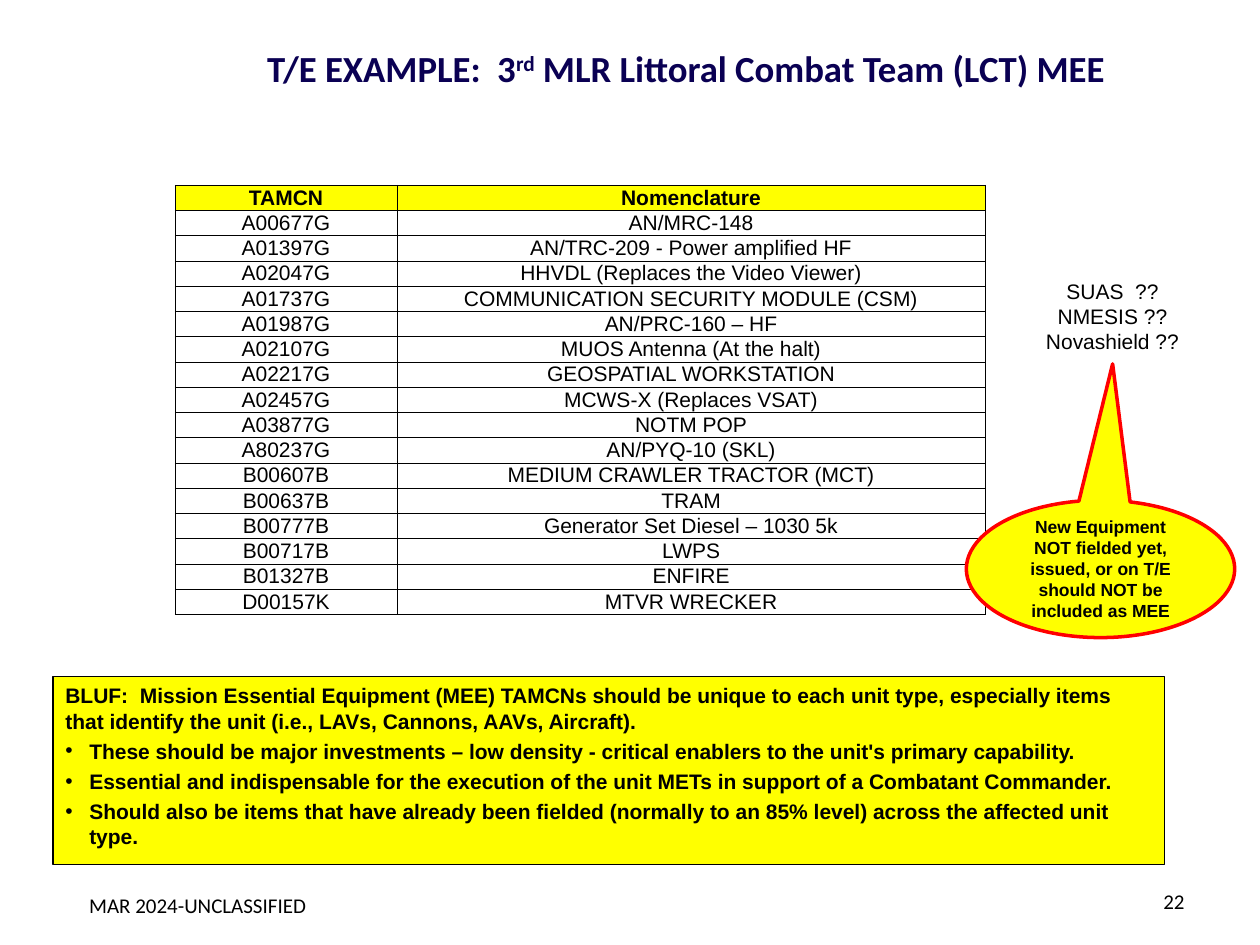
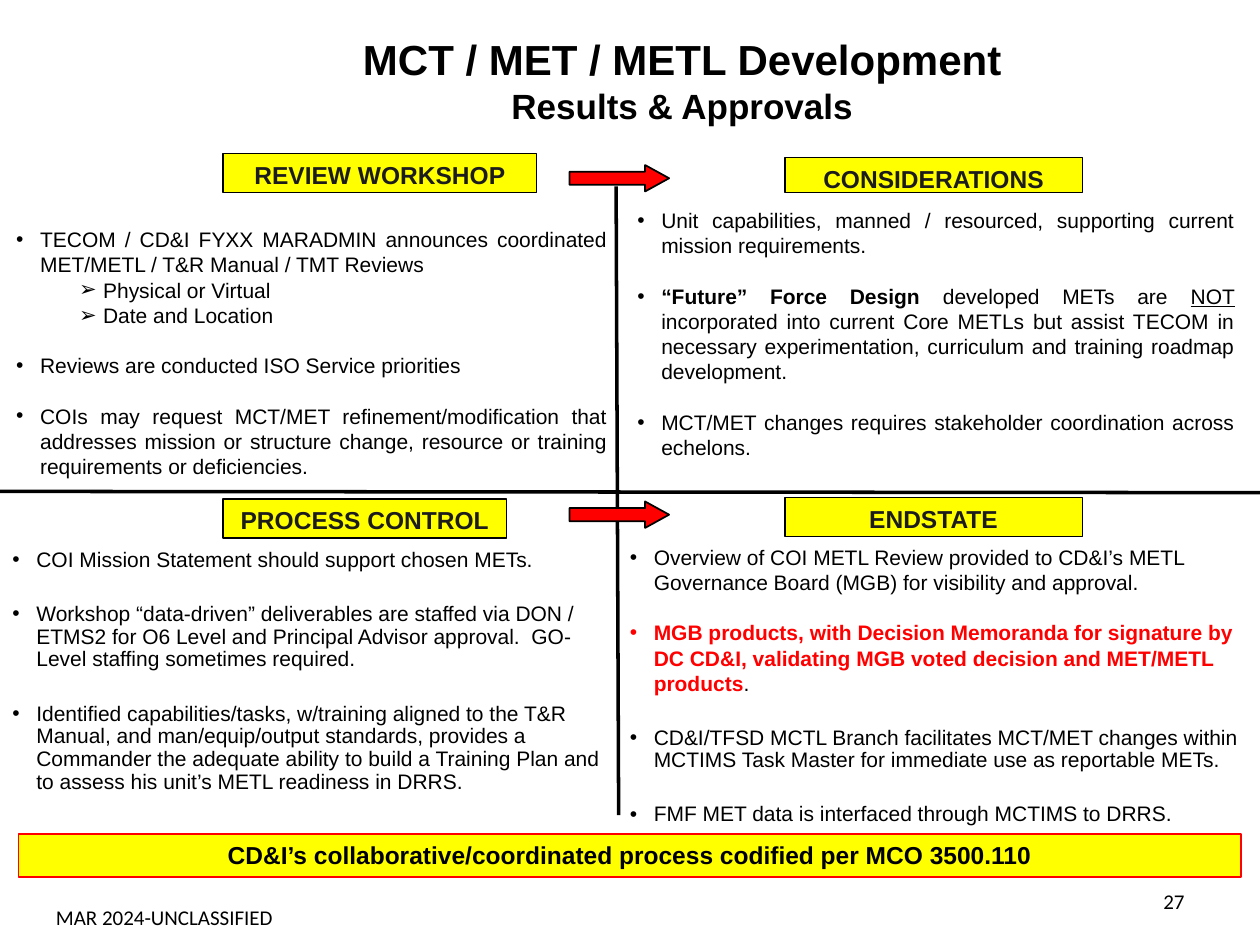
from dataclasses import dataclass

import pptx
import pptx.dml.color
import pptx.enum.shapes
import pptx.enum.text
import pptx.oxml.ns
import pptx.util
from lxml import etree

Inches = pptx.util.Inches
Pt = pptx.util.Pt
RGBColor = pptx.dml.color.RGBColor
SHAPE = pptx.enum.shapes.MSO_SHAPE
ALIGN = pptx.enum.text.PP_ALIGN
ANCHOR = pptx.enum.text.MSO_ANCHOR
qn = pptx.oxml.ns.qn

BLACK = RGBColor(0x00, 0x00, 0x00)
WHITE = RGBColor(0xFF, 0xFF, 0xFF)
YELLOW = RGBColor(0xFF, 0xFF, 0x00)
RED = RGBColor(0xFF, 0x00, 0x00)
NAVY = RGBColor(0x0A, 0x00, 0x53)
CHARCOAL = RGBColor(0x1C, 0x1C, 0x1C)

BLANK_LAYOUT = 6
GAP = 14.4  # points between bullets
TIGHT_GAP = 18  # points between bullets set at 90 % line spacing

EQUIPMENT = [
    ("TAMCN", "Nomenclature"),
    ("A00677G", "AN/MRC-148"),
    ("A01397G", "AN/TRC-209 - Power amplified HF"),
    ("A02047G", "HHVDL (Replaces the Video Viewer)"),
    ("A01737G", "COMMUNICATION SECURITY MODULE (CSM)"),
    ("A01987G", "AN/PRC-160 – HF"),
    ("A02107G", "MUOS Antenna (At the halt)"),
    ("A02217G", "GEOSPATIAL WORKSTATION"),
    ("A02457G", "MCWS-X (Replaces VSAT)"),
    ("A03877G", "NOTM POP"),
    ("A80237G", "AN/PYQ-10 (SKL)"),
    ("B00607B", "MEDIUM CRAWLER TRACTOR (MCT)"),
    ("B00637B", "TRAM"),
    ("B00777B", "Generator Set Diesel – 1030 5k"),
    ("B00717B", "LWPS"),
    ("B01327B", "ENFIRE"),
    ("D00157K", "MTVR WRECKER"),
]


@dataclass
class Para:
    """A paragraph: a string, or a list of (text, font settings) runs."""
    content: object
    bullet: str = ""
    indent: float = 0.19
    before: float = 0
    spacing: float = 1
    size: float = 0


def bullet(content, before=0.0, spacing=1.0):
    return Para(content, "•", before=before, spacing=spacing)


def arrow_bullet(content):
    return Para(content, "➢", indent=0.69)


class Deck:
    """Holds the shared style and the slide being built."""

    def __init__(self):
        self.prs = pptx.Presentation()
        self.prs.slide_width = Inches(10)
        self.prs.slide_height = Inches(7.5)
        self.s = None

    def new_slide(self):
        self.s = self.prs.slides.add_slide(self.prs.slide_layouts[BLANK_LAYOUT])

    def style_run(self, r, size, color, bold, font, underline=False, baseline=0):
        r.font.size = Pt(size)
        r.font.name = font
        r.font.bold = bold
        r.font.color.rgb = color
        if underline:
            r.font.underline = True
        if baseline:
            r._r.get_or_add_rPr().set("baseline", str(baseline * 1000))

    def add_bullet(self, p, char, indent):
        pPr = p._p.get_or_add_pPr()
        pPr.set("marL", str(Inches(indent)))
        pPr.set("indent", str(Inches(-0.19)))
        etree.SubElement(pPr, qn("a:buFont"), typeface="Arial")
        etree.SubElement(pPr, qn("a:buChar"), char=char)

    def fill_text(self, tf, paras, size=12, color=BLACK, bold=False, font="Arial",
                  align=ALIGN.LEFT, anchor=ANCHOR.TOP):
        tf.word_wrap = True
        tf.vertical_anchor = anchor
        for i, para in enumerate(paras):
            if isinstance(para, str):
                para = Para(para)
            p = tf.paragraphs[0] if i == 0 else tf.add_paragraph()
            if para.bullet:
                self.add_bullet(p, para.bullet, para.indent)
            p.alignment = align
            p.line_spacing = para.spacing
            if para.before:
                p.space_before = Pt(para.before)
            runs = para.content
            if isinstance(runs, str):
                runs = [(runs, {})]
            for text, changes in runs:
                r = p.add_run()
                r.text = text
                style = dict(size=para.size or size, color=color, bold=bold, font=font)
                self.style_run(r, **{**style, **changes})

    def text(self, box, paras, **style):
        sp = self.s.shapes.add_textbox(*map(Inches, box))
        self.fill_text(sp.text_frame, paras, **style)

    def shape(self, kind, box, fill, line, width, paras=(), adjustments=(), **style):
        sp = self.s.shapes.add_shape(kind, *map(Inches, box))
        sp.shadow.inherit = False
        sp.fill.solid()
        sp.fill.fore_color.rgb = fill
        sp.line.color.rgb = line
        sp.line.width = Pt(width)
        for i, value in enumerate(adjustments):
            sp.adjustments[i] = value
        self.fill_text(sp.text_frame, paras, **style)

    def band(self, box, text, color=BLACK, line=BLACK):
        """Yellow strip with one bold centred line."""
        self.shape(SHAPE.RECTANGLE, box, YELLOW, line, 0.75, [text],
                   size=14, bold=True, color=color, align=ALIGN.CENTER)

    def line(self, start, end):
        cx = self.s.shapes.add_connector(
            pptx.enum.shapes.MSO_CONNECTOR.STRAIGHT, *map(Inches, start + end))
        cx.line.color.rgb = BLACK
        cx.line.width = Pt(2)
        etree.SubElement(cx._element.spPr, qn("a:effectLst"))

    def border(self, cell):
        tcPr = cell._tc.get_or_add_tcPr()
        for i, side in enumerate(("lnL", "lnR", "lnT", "lnB")):
            ln = etree.Element(qn(f"a:{side}"), w=str(Pt(0.5)))
            fill = etree.SubElement(ln, qn("a:solidFill"))
            etree.SubElement(fill, qn("a:srgbClr"), val=str(BLACK))
            tcPr.insert(i, ln)

    def table(self, left, top, widths, row_height, rows):
        frame = self.s.shapes.add_table(
            len(rows), len(widths), Inches(left), Inches(top),
            Inches(sum(widths)), Inches(row_height * len(rows)))
        table = frame.table
        table.horz_banding = False
        for column, width in zip(table.columns, widths):
            column.width = Inches(width)
        for i, row in enumerate(rows):
            table.rows[i].height = Inches(row_height)
            for j, text in enumerate(row):
                cell = table.cell(i, j)
                cell.margin_left = cell.margin_right = 0
                cell.margin_top = cell.margin_bottom = 0
                cell.vertical_anchor = ANCHOR.MIDDLE
                cell.fill.solid()
                cell.fill.fore_color.rgb = YELLOW if i == 0 else WHITE
                self.border(cell)
                p = cell.text_frame.paragraphs[0]
                p.text = text
                p.alignment = ALIGN.CENTER
                self.style_run(p.runs[0], 12, BLACK, i == 0, "Arial")

    def footer(self, number, top, width):
        style = dict(font="Calibri", anchor=ANCHOR.MIDDLE)
        self.text((0, top, width, 0.4), ["MAR 2024-UNCLASSIFIED"],
                  align=ALIGN.CENTER, **style)
        self.text((7.17, 6.95, 2.33, 0.4), [str(number)], align=ALIGN.RIGHT, **style)


def equipment_slide(deck):
    deck.new_slide()
    deck.text((1.39, 0.16, 8.11, 0.75), [Para([
        ("T/E EXAMPLE:  3", {}),
        ("rd", {"baseline": 30}),
        (" MLR Littoral Combat Team (LCT) MEE", {}),
    ])], size=21, color=NAVY, bold=True, font="Calibri",
        align=ALIGN.CENTER, anchor=ANCHOR.MIDDLE)
    deck.table(1.39, 1.47, (1.76, 4.67), 0.19, EQUIPMENT)
    deck.shape(SHAPE.RECTANGLE, (0.42, 5.37, 8.82, 1.49), YELLOW, BLACK, 0.75, [
        "BLUF:  Mission Essential Equipment (MEE) TAMCNs should be unique to each unit "
        "type, especially items that identify the unit (i.e., LAVs, Cannons, AAVs, Aircraft).",
        bullet("These should be major investments – low density - critical enablers "
               "to the unit's primary capability.", 2.8),
        bullet("Essential and indispensable for the execution of the unit METs in "
               "support of a Combatant Commander.", 2.8),
        bullet("Should also be items that have already been fielded (normally to an "
               "85% level) across the affected unit type.", 2.8),
    ], bold=True)
    deck.text((8.16, 2.16, 1.34, 0.71), ["SUAS  ??", "NMESIS ??", "Novashield ??"],
              align=ALIGN.CENTER)
    deck.footer(22, 6.98, 3.14)
    deck.shape(SHAPE.OVAL_CALLOUT, (7.67, 3.97, 2.13, 1.09), YELLOW, RED, 2,
               ["New Equipment NOT fielded yet, issued, or on T/E should NOT be "
                "included as MEE"], adjustments=(0.045, -1.493),
               size=10, bold=True, align=ALIGN.CENTER, anchor=ANCHOR.MIDDLE)


def development_slide(deck):
    deck.new_slide()
    deck.text((4.96, 1.6, 4.94, 2.42), [
        bullet("Unit capabilities, manned / resourced, supporting current mission "
               "requirements."),
        bullet([
            ("“Future” Force Design ", {"bold": True}),
            ("developed METs are ", {}),
            ("NOT", {"underline": True}),
            (" incorporated into current Core METLs but assist TECOM in necessary "
             "experimentation, curriculum and training roadmap development.", {}),
        ], GAP),
        bullet("MCT/MET changes requires stakeholder coordination across echelons.", GAP),
    ], align=ALIGN.JUSTIFY)
    deck.text((0.03, 1.75, 4.89, 2), [
        bullet("TECOM / CD&I FYXX MARADMIN announces coordinated MET/METL / T&R Manual "
               "/ TMT Reviews"),
        arrow_bullet("Physical or Virtual"),
        arrow_bullet("Date and Location"),
        bullet("Reviews are conducted ISO Service priorities", GAP),
        bullet("COIs may request MCT/MET refinement/modification that addresses mission "
               "or structure change, resource or training requirements or deficiencies.",
               GAP),
    ], align=ALIGN.JUSTIFY)
    deck.text((0, 4.31, 4.92, 2.54), [
        bullet("COI Mission Statement should support chosen METs.", spacing=0.9),
        bullet("Workshop “data-driven” deliverables are staffed via DON / ETMS2 for O6 "
               "Level and Principal Advisor approval.  GO-Level staffing sometimes "
               "required.", TIGHT_GAP, 0.9),
        bullet("Identified capabilities/tasks, w/training aligned to the T&R Manual, and "
               "man/equip/output standards, provides a Commander the adequate ability to "
               "build a Training Plan and to assess his unit’s METL readiness in DRRS.",
               TIGHT_GAP, 0.9),
    ])
    deck.text((4.9, 4.27, 5.09, 2.29), [
        bullet("Overview of COI METL Review provided to CD&I’s METL Governance Board "
               "(MGB) for visibility and approval."),
        bullet([
            ("MGB products, with Decision Memoranda for signature by DC CD&I, validating "
             "MGB voted decision and MET/METL products", {"color": RED, "bold": True}),
            (".", {}),
        ], GAP),
        bullet("CD&I/TFSD MCTL Branch facilitates MCT/MET changes within MCTIMS Task "
               "Master for immediate use as reportable METs.", TIGHT_GAP, 0.9),
        bullet("FMF MET data is interfaced through MCTIMS to DRRS.", TIGHT_GAP, 0.9),
    ])
    deck.band((0.15, 6.62, 9.7, 0.34),
              "CD&I’s collaborative/coordinated process codified per MCO 3500.110", line=RED)
    deck.line((4.89, 1.48), (4.91, 6.47))
    deck.line((0, 3.9), (10, 3.91))
    for box, heading in (
        ((6.23, 1.25, 2.36, 0.28), "CONSIDERATIONS"),
        ((1.77, 1.22, 2.49, 0.31), "REVIEW WORKSHOP"),
        ((1.77, 3.96, 2.25, 0.31), "PROCESS CONTROL"),
        ((6.23, 3.95, 2.36, 0.31), "ENDSTATE"),
    ):
        deck.band(box, heading, color=CHARCOAL)
    for top in (1.31, 3.98):
        deck.shape(SHAPE.RIGHT_ARROW, (4.52, top, 0.79, 0.21), RED, BLACK, 1,
                   adjustments=(0.5, 0.907))
    deck.text((1.58, 0.22, 7.67, 0.84), [
        Para("MCT / MET / METL Development", size=24),
        Para("Results & Approvals", size=20),
    ], bold=True, align=ALIGN.CENTER)
    deck.footer(27, 7.08, 2.61)


def main():
    deck = Deck()
    equipment_slide(deck)
    development_slide(deck)
    deck.prs.save("out.pptx")


if __name__ == "__main__":
    main()
